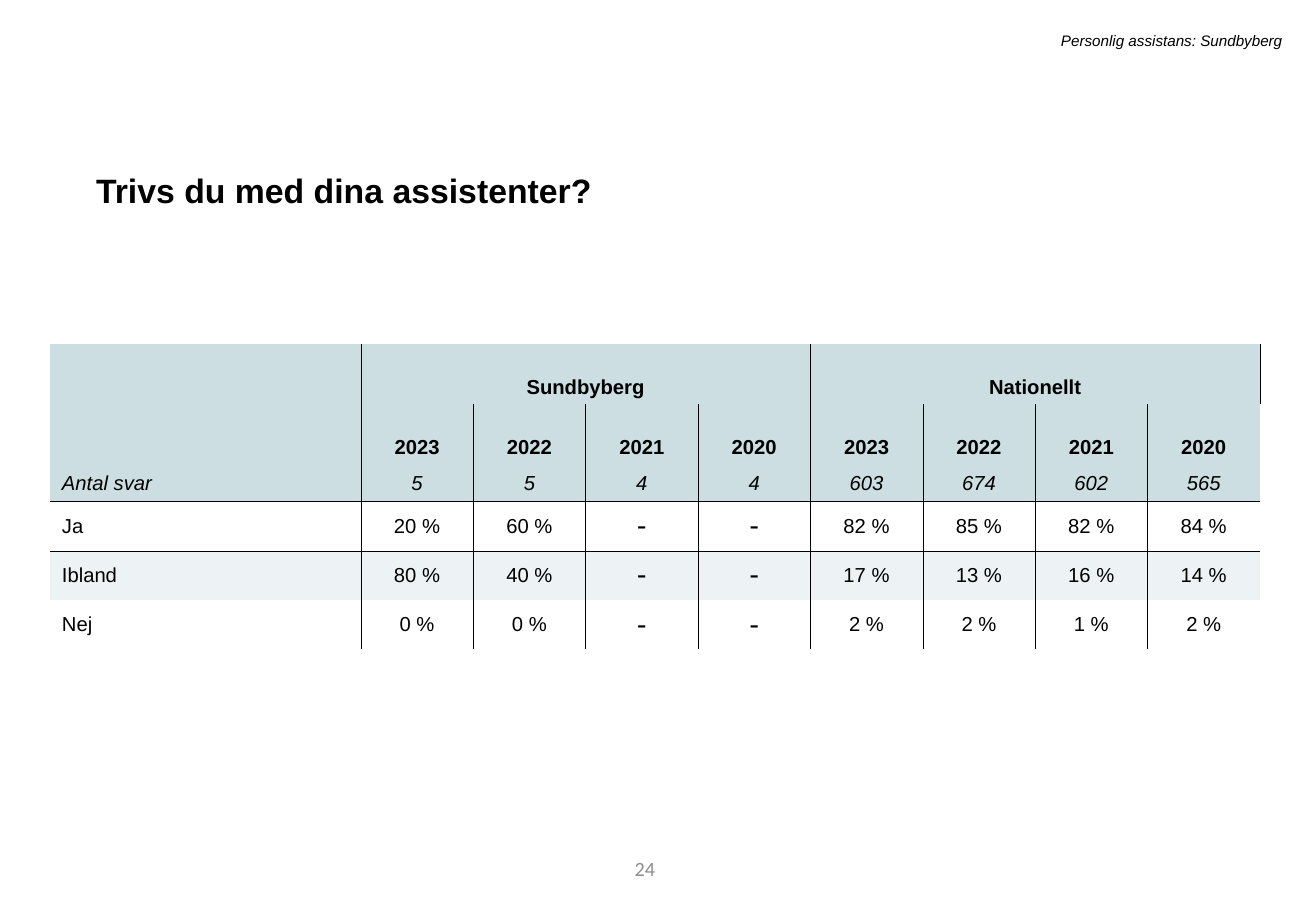
from dataclasses import dataclass

from lxml import etree
from pptx import Presentation
from pptx import util as u
from pptx.dml.color import RGBColor
from pptx.enum import text
from pptx.oxml.ns import qn

SLIDE_WIDTH, SLIDE_HEIGHT = 10.83, 7.5
NO_STYLE_NO_GRID = "{2D5ABB26-0587-4C30-8999-92F81FD0307C}"
YEARS = ["2023", "2022", "2021", "2020"]
GROUPS = ["Sundbyberg", "Nationellt"]
ANSWER_COUNTS = ["Antal svar", "5", "5", "4", "4", "603", "674", "602", "565"]
ANSWERS = [
    ["Ja", "20 %", "60 %", "-", "-", "82 %", "85 %", "82 %", "84 %"],
    ["Ibland", "80 %", "40 %", "-", "-", "17 %", "13 %", "16 %", "14 %"],
    ["Nej", "0 %", "0 %", "-", "-", "2 %", "2 %", "1 %", "2 %"],
]
LABEL_WIDTH = 2.56
HEADER_HEIGHTS = [0.5, 0.5, 0.3]
ANSWER_HEIGHT = 0.4


@dataclass(frozen=True)
class Theme:
    ink: str = "000000"
    muted: str = "8C8C8C"
    header_fill: str = "CCDEE1"
    band_fill: str = "EDF3F4"
    font: str = "Arial"
    number_font: str = "Calibri"
    title_size: int = 20
    body_size: int = 12
    dash_size: int = 18
    running_size: int = 9
    border_width: float = 0.25


THEME = Theme()
ALIGN = text.PP_ALIGN
ANCHOR = text.MSO_ANCHOR


def write(frame, content, size=THEME.body_size, align=ALIGN.LEFT,
          font=THEME.font, color=THEME.ink, bold=False, italic=False):
    """Put one formatted paragraph into a text frame."""
    frame.text = content
    paragraph = frame.paragraphs[0]
    paragraph.alignment = align
    for run in paragraph.runs:
        run.font.name = font
        run.font.size = u.Pt(size)
        run.font.bold = bold
        run.font.italic = italic
        run.font.color.rgb = RGBColor.from_string(color)
    return paragraph


def add_label(slide, box, content, anchor=ANCHOR.TOP, **style):
    """Small right-aligned text: running header or page number."""
    shape = slide.shapes.add_textbox(*map(u.Inches, box))
    frame = shape.text_frame
    frame.word_wrap = True
    frame.vertical_anchor = anchor
    write(frame, content, align=ALIGN.RIGHT, **style)


def add_title(slide, box, content):
    title = slide.shapes.title
    title.left, title.top, title.width, title.height = map(u.Inches, box)
    frame = title.text_frame
    frame.word_wrap = True
    frame.auto_size = text.MSO_AUTO_SIZE.NONE
    frame.vertical_anchor = ANCHOR.TOP
    paragraph = write(frame, content, THEME.title_size, bold=True)
    paragraph.line_spacing = 1.2
    paragraph.space_before = u.Pt(0)


def set_borders(cell, sides):
    """Draw thin lines on the given sides (in the order L, R, T, B)."""
    properties = cell._tc.get_or_add_tcPr()
    for position, side in enumerate(sides):
        line = etree.Element(qn(f"a:ln{side}"), w=str(u.Pt(THEME.border_width)))
        fill = etree.SubElement(line, qn("a:solidFill"))
        etree.SubElement(fill, qn("a:srgbClr"), val=THEME.ink)
        properties.insert(position, line)


def fill_cell(cell, color):
    if color:
        cell.fill.solid()
        cell.fill.fore_color.rgb = RGBColor.from_string(color)
    else:
        cell.fill.background()


def add_answer_table(slide, box):
    left, top, width, height = box
    group_size = len(YEARS)
    group_row = [""]
    for group in GROUPS:
        group_row += [group] + [""] * (group_size - 1)
    rows = [group_row, [""] + YEARS * len(GROUPS), ANSWER_COUNTS] + ANSWERS
    header_rows = len(HEADER_HEIGHTS)
    last_column = len(group_row) - 1

    frame = slide.shapes.add_table(len(rows), len(group_row), *map(u.Inches, box))
    table = frame.table
    table._tbl.tblPr.find(qn("a:tableStyleId")).text = NO_STYLE_NO_GRID

    # Grid
    for index, column in enumerate(table.columns):
        column.width = u.Inches((width - LABEL_WIDTH) / last_column if index else LABEL_WIDTH)
    for row, row_height in zip(table.rows, HEADER_HEIGHTS + [ANSWER_HEIGHT] * len(ANSWERS)):
        row.height = u.Inches(row_height)

    # Cells
    for r, values in enumerate(rows):
        is_header = r < header_rows
        banded = r == header_rows + 1
        color = THEME.header_fill if is_header else THEME.band_fill if banded else None
        for c, value in enumerate(values):
            cell = table.cell(r, c)
            cell.vertical_anchor = ANCHOR.BOTTOM if r < 2 else ANCHOR.MIDDLE
            dash = value == "-"
            write(cell.text_frame, value,
                  size=THEME.dash_size if dash else THEME.body_size,
                  font=THEME.number_font if dash else THEME.font,
                  align=ALIGN.CENTER if c else ALIGN.LEFT,
                  bold=r < 2, italic=r == 2)
            fill_cell(cell, color)

            # The group row has lines only around whole groups
            step = group_size if r == 0 else 1
            sides = "L" if c and (c - 1) % step == 0 else ""
            if c % step == 0 and (c < last_column or r == 0):
                sides += "R"
            if r == header_rows:
                sides += "T"
            if r == header_rows - 1:
                sides += "B"
            set_borders(cell, sides)

    # Group headings span their years; the outer line belongs to the merged cell
    for start in range(1, last_column, group_size):
        heading = table.cell(0, start)
        heading.merge(table.cell(0, start + group_size - 1))
        set_borders(heading, "")
        properties = heading._tc.tcPr
        right = etree.fromstring(etree.tostring(properties.find(qn("a:lnL"))))
        right.tag = qn("a:lnR")
        properties.insert(1, right)


def build_slide(presentation):
    slide = presentation.slides.add_slide(presentation.slide_layouts[5])
    add_title(slide, (0.69, 1.28, 9.4, 0.47), "Trivs du med dina assistenter?")
    table_height = sum(HEADER_HEIGHTS) + ANSWER_HEIGHT * len(ANSWERS)
    add_answer_table(slide, (0.41, 2.83, 9.96, table_height))
    add_label(slide, (1.79, 0.21, 8.86, 0.25), "Personlig assistans: Sundbyberg",
              size=THEME.running_size, italic=True)
    add_label(slide, (3.05, 6.95, 2.44, 0.4), "24", anchor=ANCHOR.MIDDLE,
              font=THEME.number_font, color=THEME.muted)


def main():
    presentation = Presentation()
    presentation.slide_width = u.Inches(SLIDE_WIDTH)
    presentation.slide_height = u.Inches(SLIDE_HEIGHT)
    build_slide(presentation)
    presentation.save("out.pptx")


if __name__ == "__main__":
    main()
